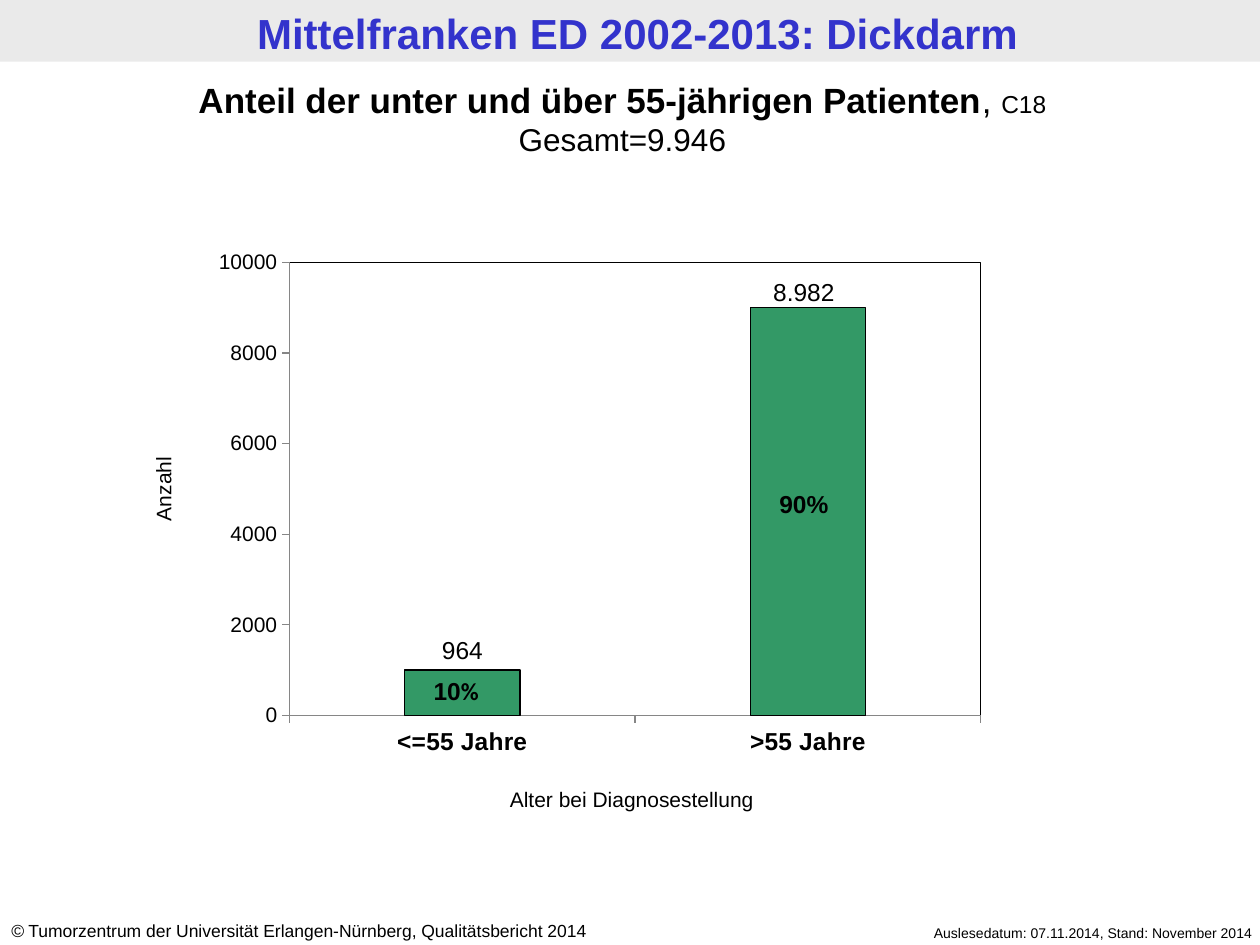
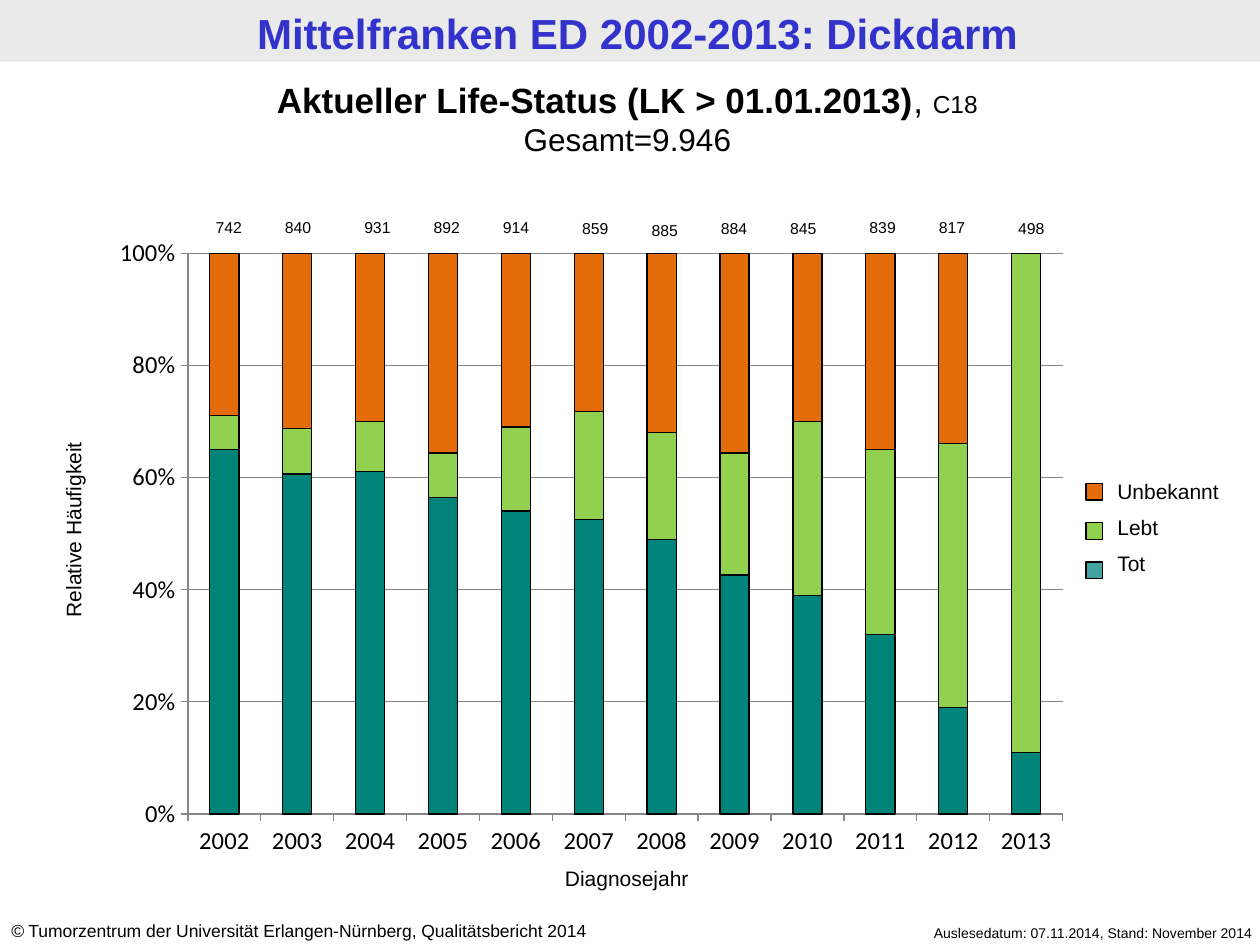
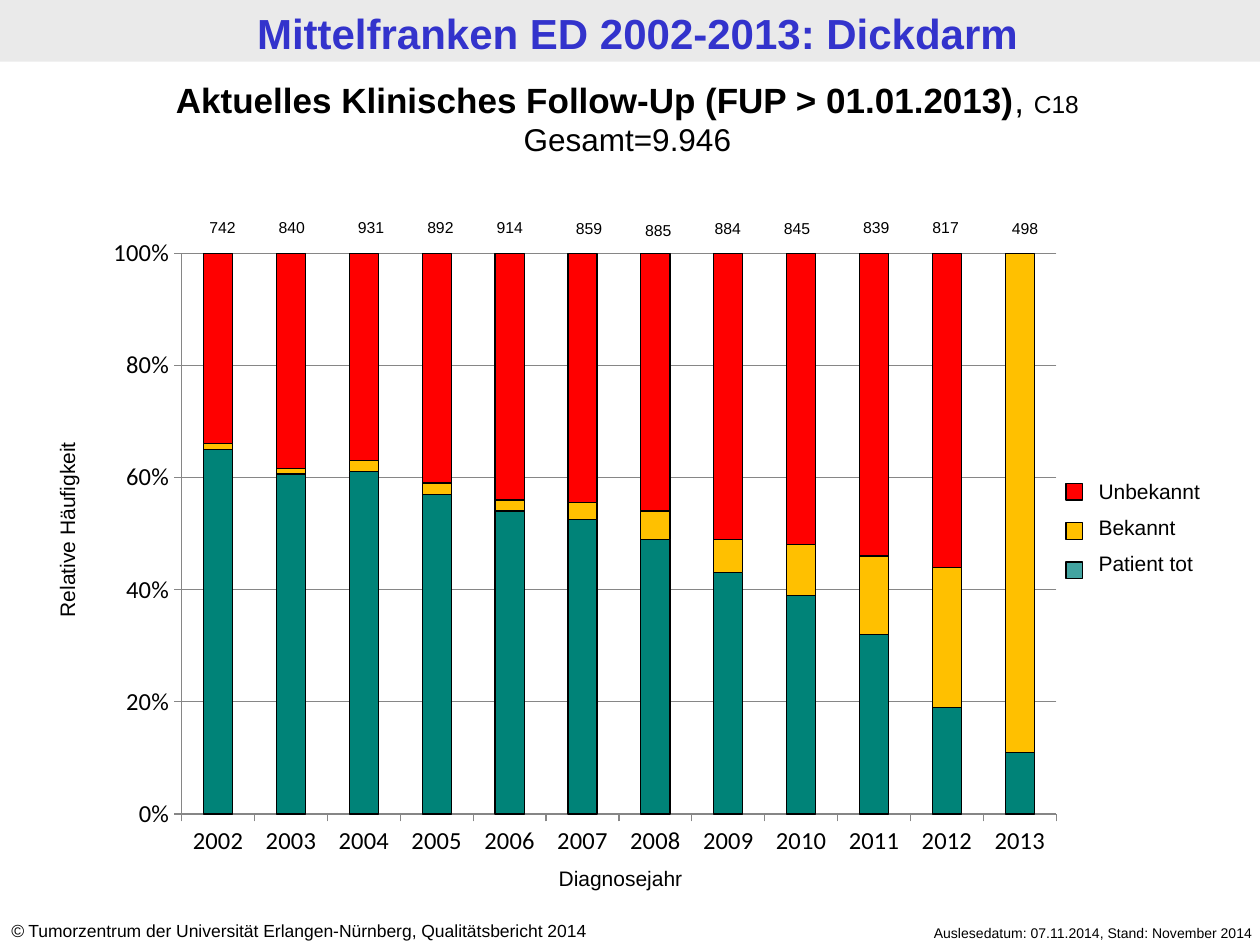
import pptx
import pptx.chart.data
import pptx.dml.color
import pptx.enum.chart
import pptx.enum.shapes
import pptx.enum.text
import pptx.oxml
import pptx.oxml.ns
import pptx.util

Inches = pptx.util.Inches
Pt = pptx.util.Pt
RGBColor = pptx.dml.color.RGBColor
ALIGN = pptx.enum.text.PP_ALIGN
CHART_TYPE = pptx.enum.chart.XL_CHART_TYPE

BLACK = RGBColor(0x00, 0x00, 0x00)
AXIS_GRAY = RGBColor(0x86, 0x86, 0x86)
BAND_GRAY = RGBColor(0xEA, 0xEA, 0xEA)
TITLE_BLUE = RGBColor(0x33, 0x33, 0xCC)
AGE_GREEN = RGBColor(0x33, 0x99, 0x66)
TEAL = RGBColor(0x00, 0x83, 0x78)
SWATCH_TEAL = RGBColor(0x00, 0x83, 0x80)
LIGHT_GREEN = RGBColor(0x92, 0xD0, 0x50)
ORANGE = RGBColor(0xE4, 0x6C, 0x0A)
AMBER = RGBColor(0xFF, 0xC0, 0x00)
RED = RGBColor(0xFF, 0x00, 0x00)


def add_text(slide, box, lines, size, align=ALIGN.CENTER, bold=None, color=BLACK, gap=0, rotation=0):
    """Add a text box with one paragraph per line; a line is a list of runs."""
    text_box = slide.shapes.add_textbox(*map(Inches, box))
    text_box.rotation = rotation
    frame = text_box.text_frame
    frame.word_wrap = True
    frame.auto_size = pptx.enum.text.MSO_AUTO_SIZE.SHAPE_TO_FIT_TEXT
    for index, runs in enumerate(lines):
        paragraph = frame.add_paragraph() if index else frame.paragraphs[0]
        paragraph.alignment = align
        if index and gap:
            paragraph.space_before = Pt(gap)
        for text in runs:
            paragraph.add_run().text = text
        paragraph.font.name = "Arial"
        paragraph.font.size = Pt(size)
        paragraph.font.bold = bold
        paragraph.font.color.rgb = color
    return frame.paragraphs


def add_stacked_chart(slide, kind, box, plot_area, categories, series, gap_width, major_unit, maximum):
    """Add a stacked column chart; series holds (values, colour) from bottom to top."""
    data = pptx.chart.data.CategoryChartData()
    data.categories = categories
    for number, (values, _) in enumerate(series, 1):
        data.add_series(f"Series {number}", values)
    chart = slide.shapes.add_chart(kind, *map(Inches, box), data).chart
    chart.has_title = False
    chart.has_legend = False
    chart.font.name = "Calibri"
    chart.font.size = Pt(18)
    chart.font.color.rgb = BLACK

    plot = chart.plots[0]
    plot.gap_width = gap_width
    plot.overlap = 100
    plot.vary_by_categories = False
    for columns, (_, color) in zip(plot.series, series):
        columns.format.fill.solid()
        columns.format.fill.fore_color.rgb = color
        columns.format.line.color.rgb = BLACK
        columns.format.line.width = Pt(0.75)

    for axis in (chart.category_axis, chart.value_axis):
        axis.major_tick_mark = pptx.enum.chart.XL_TICK_MARK.OUTSIDE
        axis.minor_tick_mark = pptx.enum.chart.XL_TICK_MARK.NONE
        axis.format.line.color.rgb = AXIS_GRAY
        axis.tick_labels.font.size = Pt(14)
        axis.tick_labels.font.color.rgb = BLACK
    chart.value_axis.minimum_scale = 0
    chart.value_axis.maximum_scale = maximum
    chart.value_axis.major_unit = major_unit
    chart.value_axis.has_major_gridlines = False

    area = chart._chartSpace.xpath("c:chart/c:plotArea")[0]
    for layout in area.xpath("c:layout"):
        area.remove(layout)
    edges = "".join(f'<c:{key} val="{value}"/>' for key, value in zip("xywh", plot_area))
    area.insert(0, pptx.oxml.parse_xml(
        f'<c:layout {pptx.oxml.ns.nsdecls("c")}><c:manualLayout><c:layoutTarget val="inner"/>'
        f'<c:xMode val="edge"/><c:yMode val="edge"/>{edges}</c:manualLayout></c:layout>'))
    return chart


presentation = pptx.Presentation()
presentation.slide_width = Inches(10)
presentation.slide_height = Inches(7.5)

headings = [
    (0, 9.88, "Anteil der unter und über 55-jährigen Patienten"),
    (-0.04, 10.04, "Aktueller Life-Status (LK > 01.01.2013)"),
    (-0.04, 10.04, "Aktuelles Klinisches Follow-Up (FUP > 01.01.2013)"),
]
for left, width, heading in headings:
    slide = presentation.slides.add_slide(presentation.slide_layouts[6])
    band = slide.shapes.add_shape(
        pptx.enum.shapes.MSO_SHAPE.RECTANGLE, 0, 0, Inches(10), Inches(0.49))
    band.shadow.inherit = False
    band.fill.solid()
    band.fill.fore_color.rgb = BAND_GRAY
    band.line.fill.background()
    add_text(slide, (0.06, 0.01, 10, 0.49), [["Mittelfranken ED 2002-2013: Dickdarm"]], 24,
             bold=True, color=TITLE_BLUE)
    add_text(slide, (6.65, 7.29, 3.39, 0.24),
             [["Auslesedatum: 07.11.2014, Stand: November 2014"]], 8, ALIGN.RIGHT)
    copyright_line = add_text(
        slide, (-0.01, 7.25, 5.24, 0.27),
        [["©", " Tumorzentrum der Universität Erlangen-Nürnberg, Qualitätsbericht 2014"]],
        10, ALIGN.LEFT)[0]
    copyright_line.runs[0].font.italic = True
    topic, total = add_text(slide, (left, 0.57, width, 0.74),
                            [[heading, ", ", "C18"], ["Gesamt=9.946"]], 20)
    topic.runs[0].font.bold = True
    topic.runs[2].font.size = Pt(14)
    total.font.size = Pt(18)

age_slide, *status_slides = presentation.slides

# Slide 1: patients by age group
age_chart = add_stacked_chart(
    age_slide, CHART_TYPE.COLUMN_STACKED, (1.51, 1.42, 6.98, 4.66), (0.113, 0.142, 0.786, 0.772),
    ["<=55 Jahre", ">55 Jahre"], [((1000, 9000), AGE_GREEN)], 200, 2000, 10000)
age_labels = age_chart.category_axis.tick_labels.font
age_labels.name = "Arial"
age_labels.bold = True
count_labels = age_chart.value_axis.tick_labels.font
count_labels.name = "Arial"
count_labels.size = Pt(12)
age_chart._chartSpace.xpath("c:chart/c:plotArea")[0].append(pptx.oxml.parse_xml(
    f'<c:spPr {pptx.oxml.ns.nsdecls("c", "a")}><a:noFill/><a:ln w="9525"><a:solidFill>'
    f'<a:srgbClr val="{BLACK}"/></a:solidFill></a:ln></c:spPr>'))

young_share = add_text(age_slide, (3.11, 5.32, 1.02, 0.34), [["10", "%"]], 14, bold=True)[0]
young_share.runs[1].font.name = "Calibri"
add_text(age_slide, (5.87, 3.83, 1.02, 0.34), [["90%"]], 14, bold=True)
add_text(age_slide, (3.16, 4.99, 1.02, 0.34), [["964"]], 14)
add_text(age_slide, (5.87, 2.15, 1.02, 0.34), [["8.982"]], 14)
add_text(age_slide, (3.35, 6.19, 3.33, 0.3), [["Alter bei Diagnosestellung"]], 12)
add_text(age_slide, (-0.01, 3.73, 2.61, 0.3), [["Anzahl"]], 12, rotation=270)

# Slides 2 and 3: status by year of diagnosis
years = [str(year) for year in range(2002, 2014)]
dead = (65, 60, 61, 57, 54, 52, 49, 43, 39, 32, 19, 11)
# Patients per year, with the label's distance from the chart's left edge and its top
year_totals = [
    (742, 0.75, 1.68), (840, 1.3, 1.68), (931, 1.93, 1.68), (892, 2.48, 1.68),
    (914, 3.03, 1.68), (859, 3.66, 1.69), (885, 4.21, 1.7), (884, 4.76, 1.69),
    (845, 5.31, 1.69), (839, 5.94, 1.68), (817, 6.49, 1.68), (498, 7.12, 1.69),
]
# Chart left, swatch left, legend left and width, legend from top to bottom, series
statuses = [
    (0.79, 8.62, 8.77, 1.23,
     [("Unbekannt", ORANGE), ("Lebt", LIGHT_GREEN), ("Tot", SWATCH_TEAL)],
     [(dead, TEAL),
      ((6, 8, 9, 8, 15, 19, 19, 22, 31, 33, 47, 89), LIGHT_GREEN),
      ((29, 31, 30, 36, 31, 28, 32, 36, 30, 35, 34, 0), ORANGE)]),
    (0.74, 8.46, 8.62, 1.42,
     [("Unbekannt", RED), ("Bekannt", AMBER), ("Patient tot", SWATCH_TEAL)],
     [(dead, TEAL),
      ((1, 1, 2, 2, 2, 3, 5, 6, 9, 14, 25, 89), AMBER),
      ((34, 38, 37, 41, 44, 44, 46, 51, 52, 54, 56, 0), RED)]),
]
for slide, status in zip(status_slides, statuses):
    chart_left, swatch_left, legend_left, legend_width, legend, series = status
    status_chart = add_stacked_chart(
        slide, CHART_TYPE.COLUMN_STACKED_100, (chart_left, 1.79, 7.8, 5.11),
        (0.09, 0.043, 0.89, 0.871), years, series, 150, 0.2, 1)
    share_axis = status_chart.value_axis
    share_axis.has_major_gridlines = True
    share_axis.major_gridlines.format.line.color.rgb = AXIS_GRAY
    share_axis.tick_labels.number_format = "0%"
    share_axis.tick_labels.number_format_is_linked = False

    add_text(slide, (chart_left - 1.41, 4.05, 2.41, 0.31), [["Relative Häufigkeit"]], 12,
             rotation=270)
    add_text(slide, (chart_left + 3.06, 6.82, 2.25, 0.31), [["Diagnosejahr"]], 12)
    for total, offset, top in year_totals:
        add_text(slide, (chart_left + offset, top, 0.55, 0.25), [[str(total)]], 9)

    add_text(slide, (legend_left, 3.75, legend_width, 0.91), [[label] for label, _ in legend], 12,
             ALIGN.LEFT, gap=6)
    for row, (_, color) in enumerate(legend):
        swatch = slide.shapes.add_shape(
            pptx.enum.shapes.MSO_SHAPE.RECTANGLE, Inches(swatch_left), Inches(3.84 + 0.31 * row),
            Inches(0.13), Inches(0.13))
        swatch.shadow.inherit = False
        swatch.fill.solid()
        swatch.fill.fore_color.rgb = color
        swatch.line.color.rgb = BLACK
        swatch.line.width = Pt(0.75)
        if color == SWATCH_TEAL:
            fill_color = swatch._element.spPr.xpath("a:solidFill/a:srgbClr")[0]
            fill_color.append(pptx.oxml.parse_xml(
                f'<a:alpha {pptx.oxml.ns.nsdecls("a")} val="74000"/>'))

presentation.save("out.pptx")
